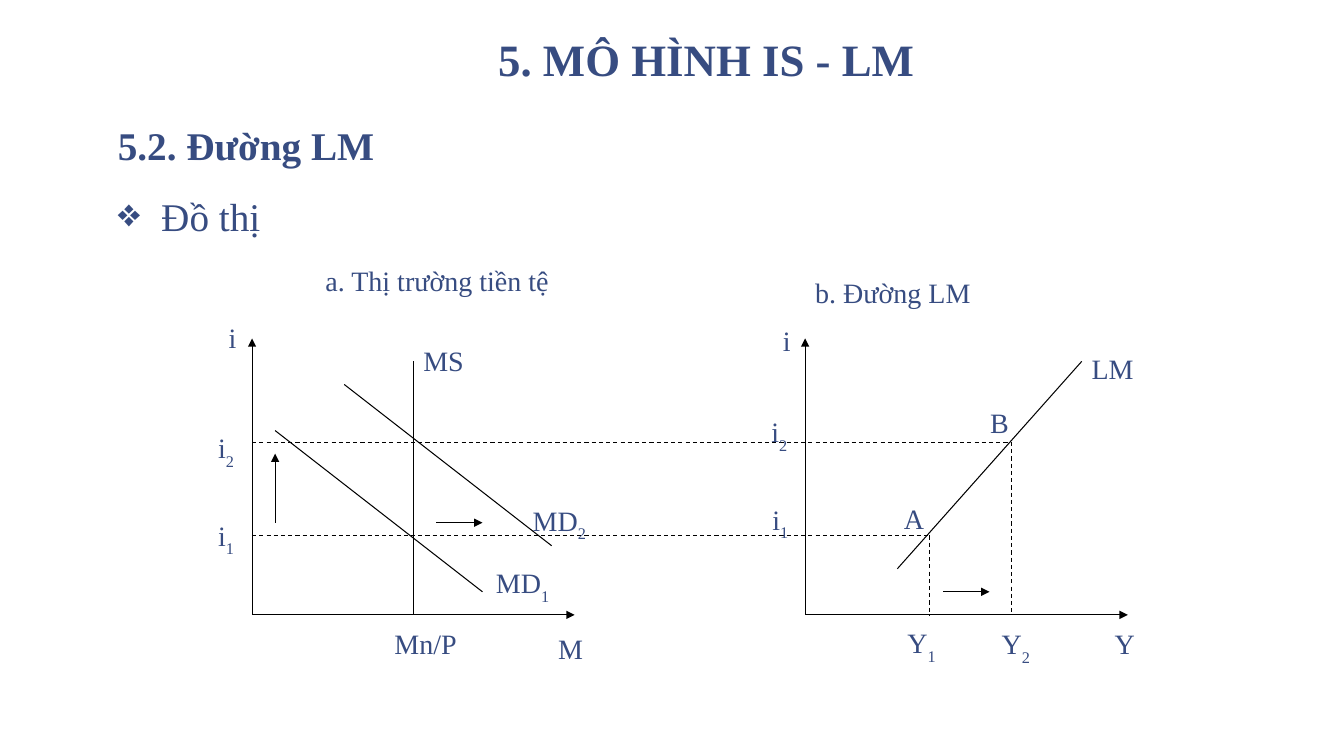
from lxml import etree
from pptx import Presentation
from pptx.dml.color import RGBColor
from pptx.enum.dml import MSO_LINE
from pptx.enum.shapes import MSO_CONNECTOR
from pptx.enum.text import MSO_ANCHOR, PP_ALIGN
from pptx.oxml.ns import qn
from pptx.util import Inches, Pt

NAVY = RGBColor(0x37, 0x4C, 0x81)
BLACK = RGBColor(0x00, 0x00, 0x00)
FONT = "Times New Roman"

SLIDE_WIDTH, SLIDE_HEIGHT = Inches(13.33), Inches(7.5)

# Diagram grid: columns run right and rows run up from the left origin
STEP = Inches(1.6) / 7
ORIGIN_X, ORIGIN_Y = Inches(2.5), Inches(6.1)
AXIS_LENGTH, AXIS_HEIGHT = 14, 12
LM_ORIGIN = 24
RATE_1, RATE_2 = 3.45, 7.5
INCOME_1, INCOME_2 = 29.4, 32.95

# Text, column, row, width in columns; "_" starts a subscript
LABELS = [
    # Money market
    ("a. Thị trường tiền tệ", 2.75, 15.45, 15),
    ("i", -1.45, 13, 1.8),
    ("i_2", -1.9, 8.2, 1.9),
    ("i_1", -1.9, 4.4, 2.4),
    ("MS", 7, 12, 5),
    ("MD_1", 10.15, 2.35, 3.6),
    ("MD_2", 11.75, 5.05, 3.5),
    ("Mn/P", 5.75, -0.3, 3.75),
    ("M", 12.85, -0.5, 3.4),
    # LM curve
    ("b. Đường LM", 24, 14.95, 15),
    ("i", 22.6, 12.85, 2),
    ("i_2", 22.1, 8.9, 1.9),
    ("i_1", 22.15, 5.1, 2.4),
    ("A", 27.85, 5.15, 2),
    ("B", 31.6, 9.3, 1.8),
    ("LM", 36, 11.65, 3),
    ("Y_1", 28, -0.25, 2.4),
    ("Y_2", 32.1, -0.3, 2.8),
    ("Y", 37, -0.3, 2.3),
]


def col(number):
    return round(ORIGIN_X + number * STEP)


def row(number):
    return round(ORIGIN_Y - number * STEP)


def style_runs(paragraph, size, bold=False):
    for run in paragraph.runs:
        run.font.name = FONT
        run.font.size = Pt(size)
        run.font.bold = bold
        run.font.color.rgb = NAVY


def add_text_frame(slide, left, top, width, height):
    frame = slide.shapes.add_textbox(left, top, width, height).text_frame
    frame.word_wrap = True
    return frame


def add_text_area(slide, left, top, width, height):
    """Heading area placed by shares of the slide."""
    frame = add_text_frame(
        slide, round(left * SLIDE_WIDTH), round(top * SLIDE_HEIGHT),
        round(width * SLIDE_WIDTH), round(height * SLIDE_HEIGHT))
    frame.margin_left = frame.margin_right = Inches(0.13)
    frame.margin_top = frame.margin_bottom = Inches(0.07)
    return frame


def add_label(slide, text, column, level, columns):
    frame = add_text_frame(slide, col(column), row(level),
                           round(columns * STEP), round(2 * STEP))
    paragraph = frame.paragraphs[0]
    base, _, subscript = text.partition("_")
    paragraph.text = base
    if subscript:
        index = paragraph.add_run()
        index.text = subscript
        index._r.get_or_add_rPr().set("baseline", "-30000")
    style_runs(paragraph, 20)


def add_line(slide, start, end, arrow=False, dashed=False):
    line = slide.shapes.add_connector(
        MSO_CONNECTOR.STRAIGHT,
        col(start[0]), row(start[1]), col(end[0]), row(end[1]))
    line.line.color.rgb = BLACK
    line.line.width = Pt(0.75)
    if dashed:
        line.line.dash_style = MSO_LINE.DASH
    properties = line._element.spPr
    if arrow:
        etree.SubElement(properties.find(qn("a:ln")), qn("a:tailEnd"),
                         type="triangle")
    etree.SubElement(properties, qn("a:effectLst"))


def add_axes(slide, origin):
    add_line(slide, (origin, 0), (origin, AXIS_HEIGHT), arrow=True)
    add_line(slide, (origin, 0), (origin + AXIS_LENGTH, 0), arrow=True)


def add_headings(slide):
    title_frame = add_text_area(slide, 0.093, -0.01, 0.865, 0.133)
    title_frame.vertical_anchor = MSO_ANCHOR.BOTTOM
    title = title_frame.paragraphs[0]
    title.text = "5. MÔ HÌNH IS - LM"
    title.alignment = PP_ALIGN.CENTER
    title.line_spacing = 0.85
    style_runs(title, 32, bold=True)

    body_frame = add_text_area(slide, 0.078, 0.156, 0.833, 0.18)
    section = body_frame.paragraphs[0]
    section.text = "5.2. Đường LM"
    section.line_spacing = 0.95
    style_runs(section, 28, bold=True)

    graph_item = body_frame.add_paragraph()
    graph_item.text = "Đồ thị"
    item_properties = graph_item._p.get_or_add_pPr()
    item_properties.set("marL", str(Inches(0.43)))
    item_properties.set("indent", str(-Inches(0.43)))
    etree.SubElement(item_properties, qn("a:buChar"), char="❖")
    graph_item.line_spacing = 0.95
    graph_item.space_before = Pt(18.7)
    style_runs(graph_item, 28)


def add_curves(slide):
    add_line(slide, (7, 0), (7, 11))  # MS
    for shift_x, shift_y in ((0, 0), (3, 2)):  # MD1, MD2
        add_line(slide, (1 + shift_x, 8 + shift_y), (10 + shift_x, 1 + shift_y))
    add_line(slide, (36, 11), (28, 2))  # LM


def add_equilibria(slide):
    for rate, income in ((RATE_1, INCOME_1), (RATE_2, INCOME_2)):
        add_line(slide, (0, rate), (income, rate), dashed=True)
        add_line(slide, (income, rate), (income, 0), dashed=True)


def add_shift_arrows(slide):
    for start, end in (((1, 4), (1, 7)), ((8, 4), (10, 4)), ((30, 1), (32, 1))):
        add_line(slide, start, end, arrow=True)


def main():
    presentation = Presentation()
    presentation.slide_width = SLIDE_WIDTH
    presentation.slide_height = SLIDE_HEIGHT
    slide = presentation.slides.add_slide(presentation.slide_layouts[6])

    add_headings(slide)
    for origin in (0, LM_ORIGIN):
        add_axes(slide, origin)
    add_curves(slide)
    add_equilibria(slide)
    add_shift_arrows(slide)
    for label in LABELS:
        add_label(slide, *label)

    presentation.save("out.pptx")


if __name__ == "__main__":
    main()
